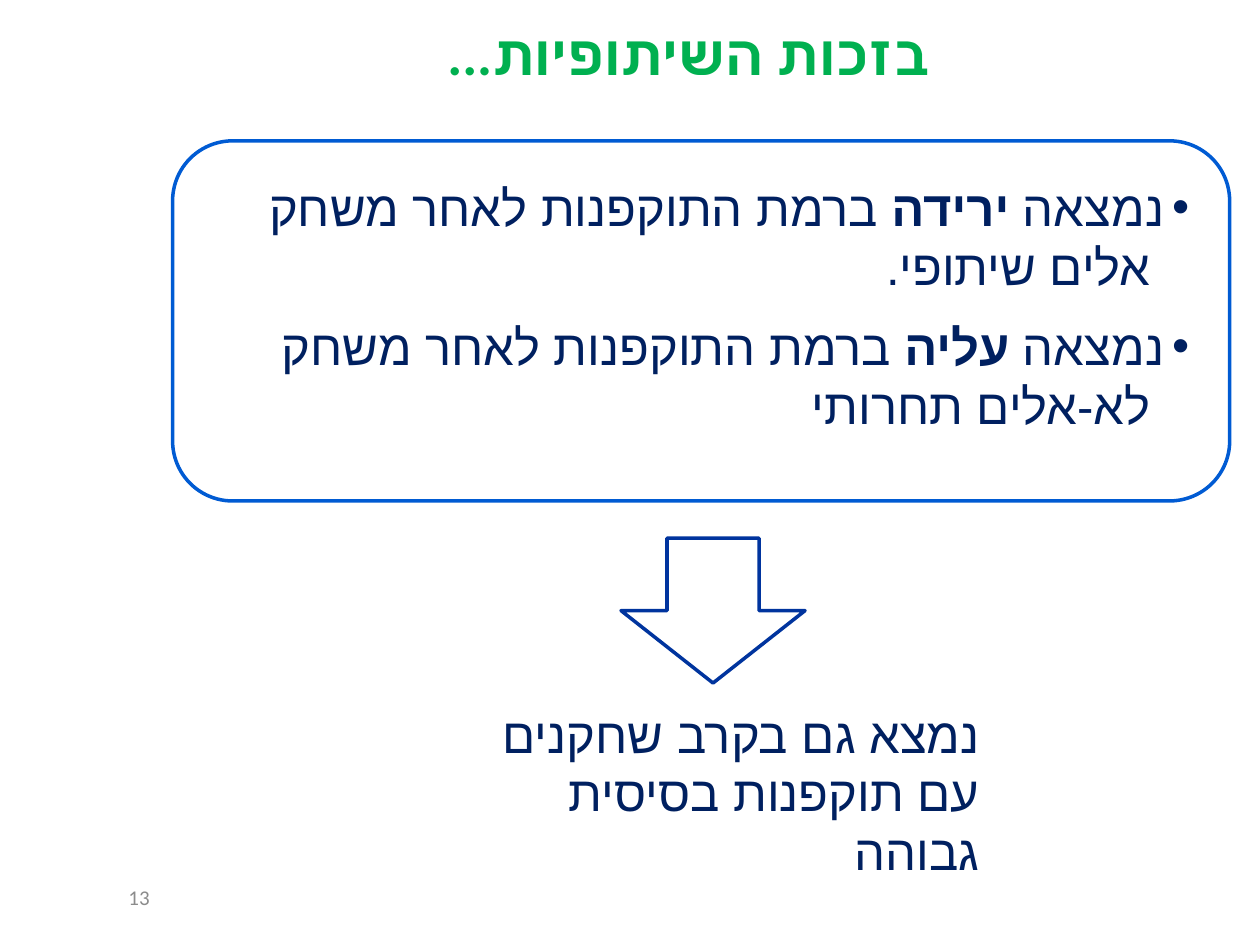
import lxml.etree
import pptx
import pptx.util
import pptx.dml.color
import pptx.enum.shapes
import pptx.enum.text
import pptx.oxml.ns
from pptx.util import Cm

Align = pptx.enum.text.PP_ALIGN
Anchor = pptx.enum.text.MSO_ANCHOR
AutoSize = pptx.enum.text.MSO_AUTO_SIZE
Preset = pptx.enum.shapes.MSO_SHAPE

# Colours
NAVY = pptx.dml.color.RGBColor(0x00, 0x20, 0x60)
GREEN = pptx.dml.color.RGBColor(0x00, 0xB0, 0x50)
GREY = pptx.dml.color.RGBColor(0x8C, 0x8C, 0x8C)
FRAME_BLUE = pptx.dml.color.RGBColor(0x00, 0x5B, 0xD3)
ARROW_BLUE = pptx.dml.color.RGBColor(0x00, 0x34, 0x9E)

# Content: each text is a list of lines, each line a list of (words, bold)
TITLE = [[("בזכות השיתופיות...", True)]]
FINDINGS = [
    [[("נמצאה ", False), ("ירידה", True), (" ברמת התוקפנות לאחר משחק ", False)],
     [(" אלים שיתופי.", False)]],
    [[("נמצאה ", False), ("עליה", True), (" ברמת התוקפנות לאחר משחק ", False)],
     [(" לא-אלים תחרותי", False)]],
]
CONCLUSION = [[("נמצא גם בקרב שחקנים עם תוקפנות בסיסית גבוהה", False)]]
PAGE_NUMBER = [[("13", False)]]

# Text formats
BODY_FONT = {"name": "Arial", "size": pptx.util.Pt(28), "color": NAVY}
TITLE_FONT = {"name": "Calibri", "size": pptx.util.Pt(32), "color": GREEN}
NUMBER_FONT = {"name": "Calibri", "size": pptx.util.Pt(12), "color": GREY}

# Places: left, top, width, height
TITLE_BOX = (Cm(2.46), Cm(0), Cm(22.86), Cm(2.16))
FINDING_LEFT, FINDING_TOP, FINDING_STEP = 1.45, 3.45, 2.8
FINDING_WIDTH, FINDING_HEIGHT = 22.78, 2.64
CONCLUSION_BOX = (Cm(8.76), Cm(14.07), Cm(11.23), Cm(2.64))
NUMBER_BOX = (Cm(2.34), Cm(17.58), Cm(5.92), Cm(1.02))
OUTLINES = [
    (Preset.ROUNDED_RECTANGLE, FRAME_BLUE, (Cm(3.48), Cm(2.84), Cm(21.31), Cm(7.26))),
    (Preset.DOWN_ARROW, ARROW_BLUE, (Cm(12.52), Cm(10.85), Cm(3.71), Cm(2.92))),
]


def set_attributes(target, values):
    for name, value in values.items():
        setattr(target, name, value)


def place(shape, box):
    set_attributes(shape, dict(zip(("left", "top", "width", "height"), box)))


def add_element(parent, tag, **attributes):
    lxml.etree.SubElement(parent, pptx.oxml.ns.qn(tag), attributes)


def write(shape, lines, font, alignment, anchor=Anchor.TOP, auto_size=AutoSize.NONE,
          bullet=False):
    """Fill a shape with one right-to-left paragraph."""
    frame = shape.text_frame
    set_attributes(frame, {"word_wrap": True, "vertical_anchor": anchor,
                           "auto_size": auto_size})
    paragraph = frame.paragraphs[0]
    set_attributes(paragraph, {"alignment": alignment, "space_before": pptx.util.Pt(0)})
    properties = paragraph._p.get_or_add_pPr()
    properties.set("rtl", "1")
    if bullet:
        properties.set("marL", str(Cm(0.51)))
        properties.set("marR", "0")
        properties.set("indent", str(Cm(-0.74)))
        add_element(properties, "a:buFont", typeface="Arial")
        add_element(properties, "a:buChar", char="•")
    for number, line in enumerate(lines):
        if number:
            paragraph.add_line_break()
        for words, bold in line:
            run = paragraph.add_run()
            run.text = words
            set_attributes(run.font, {"name": font["name"], "size": font["size"],
                                      "bold": bold})
            run.font.color.rgb = font["color"]
            add_element(run._r.get_or_add_rPr(), "a:cs", typeface=font["name"])


presentation = pptx.Presentation()
set_attributes(presentation, {"slide_width": Cm(25.4), "slide_height": Cm(19.05)})
slide = presentation.slides.add_slide(presentation.slide_layouts[3])

# Title
place(slide.shapes.title, TITLE_BOX)
write(slide.shapes.title, TITLE, TITLE_FONT, Align.CENTER, Anchor.MIDDLE)

# Findings, one body placeholder each
for index, finding in enumerate(FINDINGS):
    body = slide.placeholders[index + 1]
    place(body, (Cm(FINDING_LEFT), Cm(FINDING_TOP + index * FINDING_STEP),
                 Cm(FINDING_WIDTH), Cm(FINDING_HEIGHT)))
    write(body, finding, BODY_FONT, Align.RIGHT, auto_size=AutoSize.SHAPE_TO_FIT_TEXT,
          bullet=True)

# Frame around the findings and arrow to the conclusion
for preset, colour, box in OUTLINES:
    outline = slide.shapes.add_shape(preset, *box)
    outline.shadow.inherit = False
    outline.fill.background()
    outline.line.color.rgb = colour
    outline.line.width = pptx.util.Pt(2)

# Conclusion and page number
write(slide.shapes.add_textbox(*CONCLUSION_BOX), CONCLUSION, BODY_FONT, Align.RIGHT,
      auto_size=AutoSize.SHAPE_TO_FIT_TEXT)
write(slide.shapes.add_textbox(*NUMBER_BOX), PAGE_NUMBER, NUMBER_FONT, Align.LEFT,
      Anchor.MIDDLE)

presentation.save("out.pptx")
